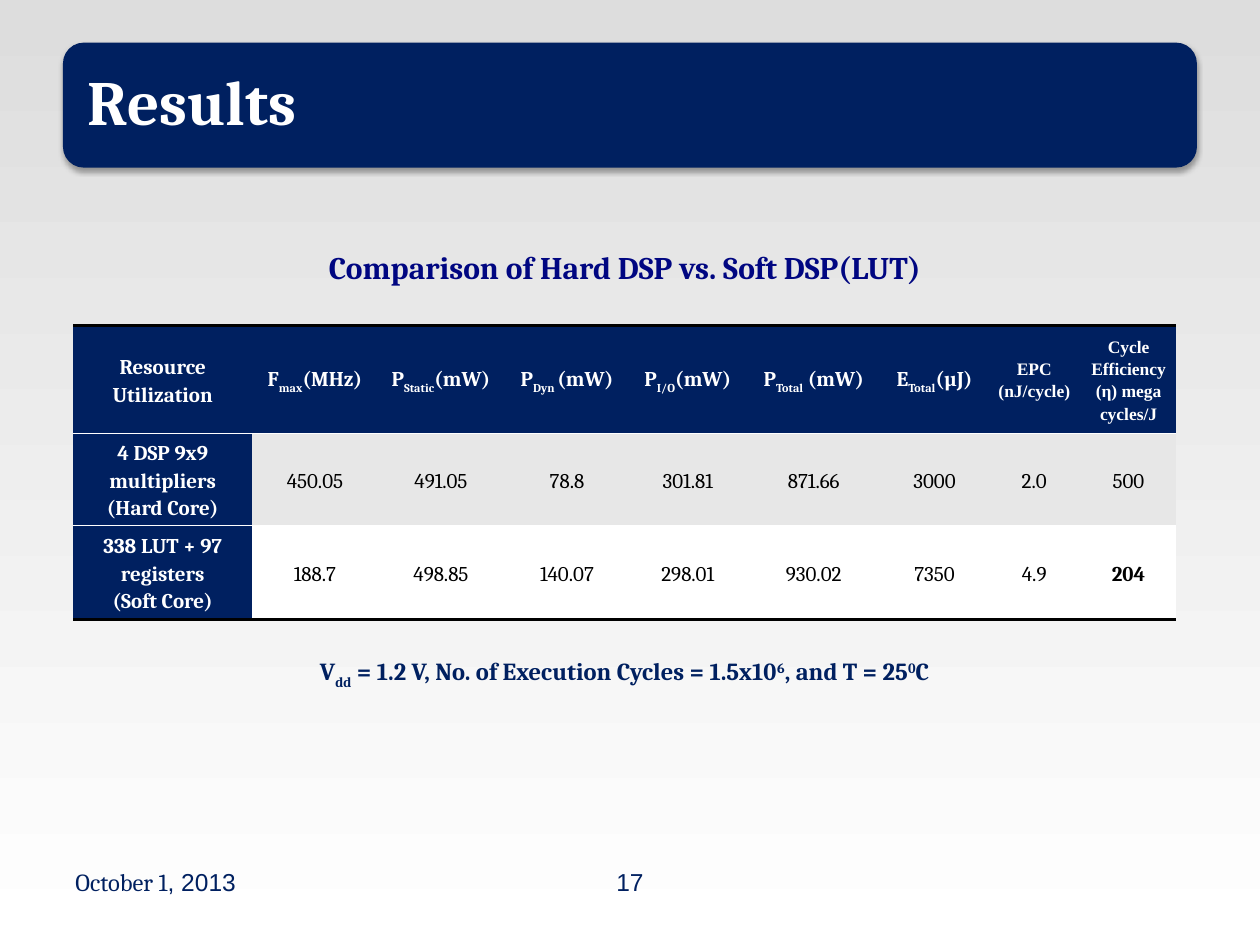
from lxml.etree import SubElement
from pptx import Presentation
from pptx.dml.color import RGBColor
from pptx.enum.shapes import MSO_SHAPE
from pptx.enum.text import MSO_ANCHOR, PP_ALIGN
from pptx.oxml import parse_xml
from pptx.oxml.ns import nsdecls, qn
from pptx.util import Cm, Pt

NAVY = RGBColor(0x00, 0x20, 0x60)
CAPTION_BLUE = RGBColor(0x00, 0x06, 0x81)
WHITE = RGBColor(0xFF, 0xFF, 0xFF)
BLACK = RGBColor(0x00, 0x00, 0x00)
BAND_GREY = RGBColor(0xE7, 0xE7, 0xE7)
TOP_GREY = RGBColor(0xDD, 0xDD, 0xDD)
SUB, SUPER = -25000, 30000
NO_STYLE = "{2D5ABB26-0587-4C30-8999-92F81FD0307C}"


def write(paragraph, pieces, size, color, bold=False, font="Cambria"):
    """Add runs; a piece is plain text, a line break or a (text, baseline shift) pair."""
    for piece in pieces:
        if piece == "\n":
            paragraph.add_line_break()
            SubElement(paragraph._p[-1], qn("a:rPr"), sz=str(size * 100))
            continue
        text, baseline = (piece, 0) if isinstance(piece, str) else piece
        run = paragraph.add_run()
        run.text = text
        values = {"size": Pt(size), "bold": bold, "name": font}
        for attribute, value in values.items():
            setattr(run.font, attribute, value)
        run.font.color.rgb = color
        if baseline:
            run._r.get_or_add_rPr().set("baseline", str(baseline))


def add_text_line(slide, left, top, width, height, align):
    """Add a wrapping text box and return its first paragraph."""
    frame = slide.shapes.add_textbox(Cm(left), Cm(top), Cm(width), Cm(height)).text_frame
    frame.word_wrap = True
    frame.paragraphs[0].alignment = align
    return frame.paragraphs[0]


prs = Presentation()
prs.slide_width, prs.slide_height = Cm(25.4), Cm(19.05)
slide = prs.slides.add_slide(prs.slide_layouts[6])

# Background, grey at the top to white at the bottom
backdrop = slide.background.fill
backdrop.gradient()
backdrop.gradient_angle = 270
for stop, position, color in zip(backdrop.gradient_stops, (0, 1), (TOP_GREY, WHITE)):
    stop.position = position
    stop.color.rgb = color

# Title banner
banner = slide.shapes.add_shape(
    MSO_SHAPE.ROUNDED_RECTANGLE, Cm(1.27), Cm(0.86), Cm(22.86), Cm(2.52))
banner.fill.solid()
banner.fill.fore_color.rgb = NAVY
banner.line.fill.background()
banner.shadow.inherit = False
effects = banner._element.spPr.find(qn("a:effectLst"))
effects.append(parse_xml(
    f'<a:outerShdw {nsdecls("a")} blurRad="{Pt(3.1)}" dist="{Pt(1.8)}" dir="5400000" '
    'rotWithShape="0"><a:srgbClr val="000000"><a:alpha val="35000"/></a:srgbClr></a:outerShdw>'))
title_frame = banner.text_frame
title_frame.margin_left = title_frame.margin_right = Cm(0.38)
title_frame.vertical_anchor = MSO_ANCHOR.MIDDLE
title = title_frame.paragraphs[0]
title.alignment = PP_ALIGN.LEFT
title.line_spacing = 0.9
write(title, ["Results"], 36, WHITE, bold=True)

caption = add_text_line(slide, 1.27, 4.88, 22.66, 11.23, PP_ALIGN.CENTER)
write(caption, ["Comparison of Hard DSP vs. Soft DSP(LUT)"], 18, CAPTION_BLUE, bold=True)

# Footer
date = add_text_line(slide, 1.27, 17.35, 5.92, 1.32, PP_ALIGN.LEFT)
write(date, ["October 1"], 14, NAVY)
write(date, [", 2013"], 14, NAVY, font="Arial")
page_number = add_text_line(slide, 9.74, 17.35, 5.92, 1.32, PP_ALIGN.CENTER)
write(page_number, ["17"], 14, NAVY, font="Arial")

# Results table
header = [
    ["Resource Utilization"],
    ["F", ("max", SUB), "(MHz)"],
    ["P", ("Static", SUB), "(mW)"],
    ["P", ("Dyn ", SUB), "(mW)"],
    ["P", ("I/O", SUB), "(mW)"],
    ["P", ("Total", SUB), " (mW)"],
    ["E", ("Total", SUB), "(µJ)"],
    ["EPC", "\n", "(nJ/cycle)"],
    ["Cycle Efficiency (η) mega cycles/J"],
]
hard_core = ["450.05", "491.05", "78.8", "301.81", "871.66", "3000", "2.0", "500"]
soft_core = ["188.7", "498.85", "140.07", "298.01", "930.02", "7350", "4.9", "204"]
rows = [
    header,
    [["4 DSP 9x9 multipliers (Hard Core)"]] + [[value] for value in hard_core],
    [["338 LUT + 97", "\n", "registers", "\n", "(Soft Core)"]] + [[value] for value in soft_core],
]
column_widths = [3.6, 2.54, 2.54, 2.54, 2.33, 2.75, 2.12, 1.9, 1.9]
row_heights = [2.18, 1.85, 1.9]
row_fills = [NAVY, BAND_GREY, WHITE]
rules = [(BLACK, 2), (WHITE, 1), (WHITE, 1), (BLACK, 2)]

table = slide.shapes.add_table(
    len(rows), len(header), Cm(1.48), Cm(6.56),
    Cm(sum(column_widths)), Cm(sum(row_heights))).table
table.first_row = table.horz_banding = False
table._tbl.tblPr.find(qn("a:tableStyleId")).text = NO_STYLE
for column, width in zip(table.columns, column_widths):
    column.width = Cm(width)

for r, row in enumerate(rows):
    table.rows[r].height = Cm(row_heights[r])
    for c, pieces in enumerate(row):
        cell = table.cell(r, c)
        is_heading = r == 0 or c == 0
        is_narrow_heading = r == 0 and c >= 7
        is_key_result = pieces == ["204"]
        cell.margin_left = cell.margin_right = Cm(0.18)
        cell.margin_top = cell.margin_bottom = 0
        cell.vertical_anchor = MSO_ANCHOR.MIDDLE
        paragraph = cell.text_frame.paragraphs[0]
        paragraph.alignment = PP_ALIGN.CENTER
        paragraph.line_spacing = 1.15
        write(paragraph, pieces,
              size=10 if is_narrow_heading else 12,
              color=WHITE if is_heading else BLACK,
              bold=is_heading or is_key_result,
              font="Times New Roman" if is_narrow_heading else "Cambria")

        properties = cell._tc.get_or_add_tcPr()
        for edge, (color, weight) in zip(("a:lnT", "a:lnB"), rules[r:r + 2]):
            border = SubElement(properties, qn(edge), w=str(Pt(weight)))
            SubElement(SubElement(border, qn("a:solidFill")), qn("a:srgbClr"), val=str(color))
        cell.fill.solid()
        cell.fill.fore_color.rgb = NAVY if is_heading else row_fills[r]

conditions = add_text_line(slide, 1.48, 13.11, 22.22, 0.86, PP_ALIGN.CENTER)
write(conditions,
      ["V", ("dd", SUB), " = 1.2 V, No. of Execution Cycles = 1.5x10", ("6", SUPER),
       ", and T = 25", ("0", SUPER), "C"], 14, NAVY, bold=True)

prs.save("out.pptx")
